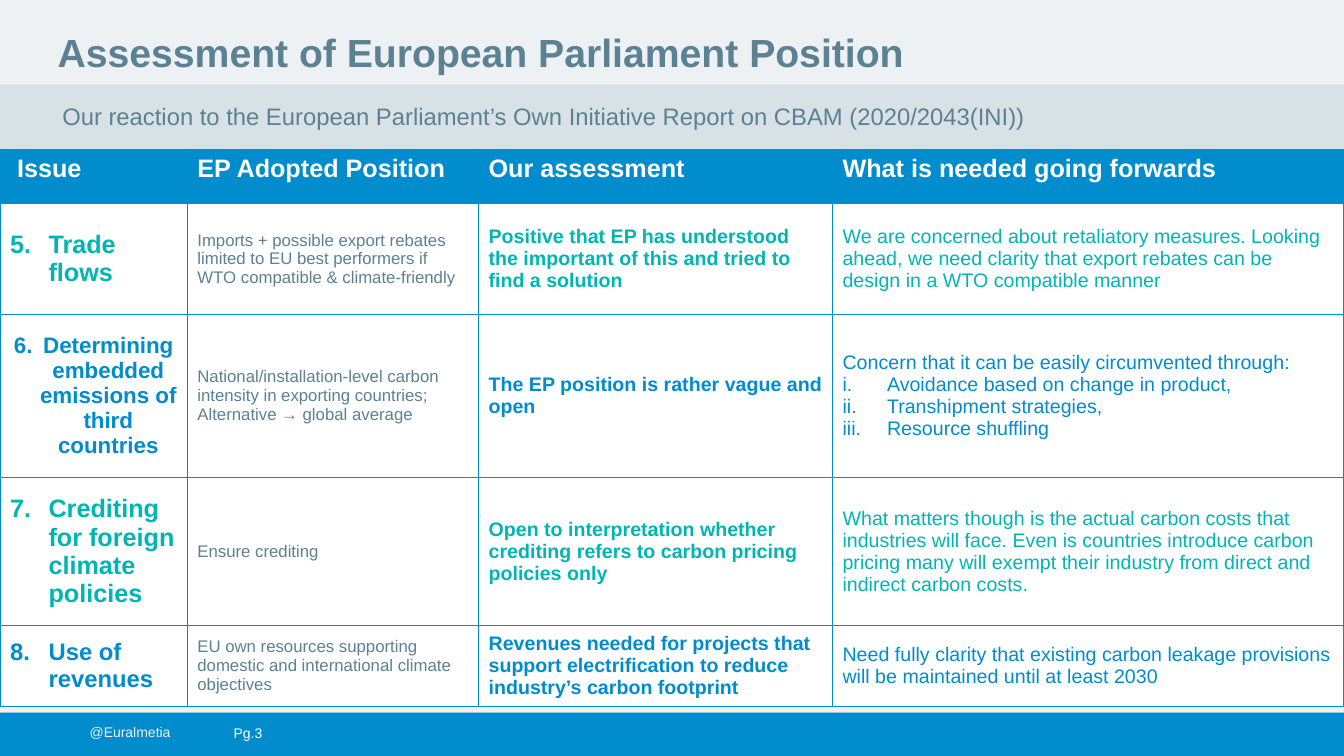
from dataclasses import dataclass

from lxml.etree import SubElement
from pptx import Presentation
from pptx.dml.color import RGBColor
from pptx.enum.shapes import MSO_SHAPE
from pptx.enum.text import MSO_ANCHOR, MSO_AUTO_SIZE, PP_ALIGN
from pptx.oxml.ns import qn
from pptx.util import Cm, Pt


@dataclass(frozen=True)
class Theme:
    font: str = "Arial"
    paper: str = "EDF1F4"
    band: str = "D8E1E5"
    slate: str = "5C8193"
    blue: str = "008CCD"
    teal: str = "01B5B3"
    white: str = "FFFFFF"
    title_size: int = 28
    subtitle_size: int = 17
    heading_size: int = 18
    compact_size: int = 16
    assessment_size: int = 14
    position_size: int = 12
    footer_size: int = 10


class SlideBuilder:
    def __init__(self, deck, theme):
        self.theme = theme
        self.page = deck.slides.add_slide(deck.slide_layouts[5])
        self.paint(self.page.background.fill, theme.paper)

    def paint(self, fill, color):
        fill.solid()
        fill.fore_color.rgb = RGBColor.from_string(color)

    def add_span(self, para, text, size, color, bold=False):
        span = para.add_run()
        span.text = text
        span.font.name = self.theme.font
        span.font.size = Pt(size)
        span.font.bold = bold
        span.font.color.rgb = RGBColor.from_string(color)

    def number(self, para, scheme, start, indent):
        properties = para._p.get_or_add_pPr()
        properties.set("marL", str(Cm(indent)))
        properties.set("indent", str(-Cm(indent)))
        SubElement(properties, qn("a:buAutoNum"), type=scheme, startAt=str(start))

    def title(self, text, left, top, width, height):
        box = self.page.shapes.title
        box.left, box.top, box.width, box.height = map(Cm, (left, top, width, height))
        frame = box.text_frame
        frame.auto_size = MSO_AUTO_SIZE.NONE
        frame.word_wrap = True
        frame.vertical_anchor = MSO_ANCHOR.TOP
        frame.margin_left = frame.margin_top = frame.margin_bottom = 0
        para = frame.paragraphs[0]
        para.alignment = PP_ALIGN.LEFT
        para.line_spacing = 0.9
        self.add_span(para, text, self.theme.title_size, self.theme.slate, True)

    def bar(self, top, width, height, color):
        shape = self.page.shapes.add_shape(
            MSO_SHAPE.RECTANGLE, 0, Cm(top), width, Cm(height))
        shape.shadow.inherit = False
        self.paint(shape.fill, color)
        shape.line.fill.background()

    def label(self, text, place, size, color, padded=False, anchor=MSO_ANCHOR.TOP):
        frame = self.page.shapes.add_textbox(*map(Cm, place)).text_frame
        frame.word_wrap = True
        frame.vertical_anchor = anchor
        if not padded:
            frame.margin_left = frame.margin_right = 0
            frame.margin_top = frame.margin_bottom = 0
        self.add_span(frame.paragraphs[0], text, size, color)

    def table(self, top, widths, heights):
        frame = self.page.shapes.add_table(
            len(heights), len(widths), 0, Cm(top), Cm(sum(widths)), Cm(sum(heights)))
        table = frame.table
        table.horz_banding = False
        for column, width in zip(table.columns, widths):
            column.width = Cm(width)
        for row, height in zip(table.rows, heights):
            row.height = Cm(height)
        return table

    def cell(self, cell, fill, anchor=MSO_ANCHOR.MIDDLE):
        properties = cell._tc.get_or_add_tcPr()
        for side in ("lnL", "lnR", "lnT", "lnB"):
            line = SubElement(properties, qn(f"a:{side}"), w=str(Pt(1)))
            paint = SubElement(line, qn("a:solidFill"))
            SubElement(paint, qn("a:srgbClr"), val=self.theme.blue)
        self.paint(cell.fill, fill)
        cell.vertical_anchor = anchor
        return cell.text_frame.paragraphs[0]

    def header(self, table, headings):
        theme = self.theme
        for column, heading in enumerate(headings):
            para = self.cell(table.cell(0, column), theme.blue, MSO_ANCHOR.TOP)
            self.add_span(para, heading, theme.heading_size, theme.white, True)
        table.cell(0, 0).margin_left = Cm(0.43)

    def issue_row(self, table, row, number, issue, size, position, assessment, needs):
        theme = self.theme
        accent = theme.teal if row % 2 else theme.blue
        issue_para, position_para, assessment_para, needs_para = (
            self.cell(cell, theme.white) for cell in table.rows[row].cells)
        compact = size == theme.compact_size
        self.number(issue_para, "arabicPeriod", number, 0.74 if compact else 0.97)
        if compact:
            issue_para.alignment = PP_ALIGN.CENTER
        self.add_span(issue_para, issue, size, accent, True)
        self.add_span(position_para, position, theme.position_size, theme.slate)
        self.add_span(assessment_para, assessment, theme.assessment_size, accent, True)
        opening, *points = needs
        self.add_span(needs_para, opening, theme.assessment_size, accent)
        for point in points:
            para = table.cell(row, 3).text_frame.add_paragraph()
            self.number(para, "romanLcPeriod", 1, 1.12)
            self.add_span(para, point, theme.assessment_size, accent)


def main():
    theme = Theme()
    deck = Presentation()
    deck.slide_width, deck.slide_height = Cm(33.87), Cm(19.05)
    slide = SlideBuilder(deck, theme)

    slide.bar(17.96, deck.slide_width, 1.09, theme.blue)
    slide.label("@Euralmetia", (2.26, 18.24, 3.1, 0.43), theme.footer_size, theme.paper)
    slide.label("Pg.3", (5.89, 18.08, 1.4, 0.76), theme.footer_size, theme.white,
                anchor=MSO_ANCHOR.MIDDLE)
    slide.title("Assessment of European Parliament Position", 1.45, 0.84, 21.89, 2.03)
    slide.bar(2.13, deck.slide_width, 2.03, theme.band)
    slide.label(
        "Our reaction to the European Parliament’s Own Initiative Report on CBAM (2020/2043(INI))",
        (1.32, 2.44, 32.54, 0.99), theme.subtitle_size, theme.slate, padded=True)

    issues = [
        ("Trade flows", theme.heading_size,
         "Imports + possible export rebates limited to EU best performers if "
         "WTO compatible & climate-friendly",
         "Positive that EP has understood the important of this and tried to find a solution",
         ["We are concerned about retaliatory measures. Looking ahead, we need clarity "
          "that export rebates can be design in a WTO compatible manner"]),
        ("Determining embedded emissions of third countries", theme.compact_size,
         "National/installation-level carbon intensity in exporting countries; "
         "Alternative → global average",
         "The EP position is rather vague and open",
         ["Concern that it can be easily circumvented through:",
          "Avoidance based on change in product,",
          "Transhipment strategies,",
          "Resource shuffling"]),
        ("Crediting for foreign climate policies", theme.heading_size,
         "Ensure crediting",
         "Open to interpretation whether crediting refers to carbon pricing policies only",
         ["What matters though is the actual carbon costs that industries will face. "
          "Even is countries introduce carbon pricing many will exempt their industry "
          "from direct and indirect carbon costs."]),
        ("Use of revenues", theme.subtitle_size,
         "EU own resources supporting domestic and international climate objectives",
         "Revenues needed for projects that support electrification to reduce "
         "industry’s carbon footprint",
         ["Need fully clarity that existing carbon leakage provisions will be "
          "maintained until at least 2030"]),
    ]
    table = slide.table(3.76, (4.72, 7.34, 8.92, 12.89), (1.37, 2.79, 4.11, 3.73, 2.03))
    slide.header(table, ("Issue", "EP Adopted Position", "Our assessment",
                         "What is needed going forwards"))
    for row, issue in enumerate(issues, start=1):
        slide.issue_row(table, row, row + 4, *issue)

    deck.save("out.pptx")


if __name__ == "__main__":
    main()
